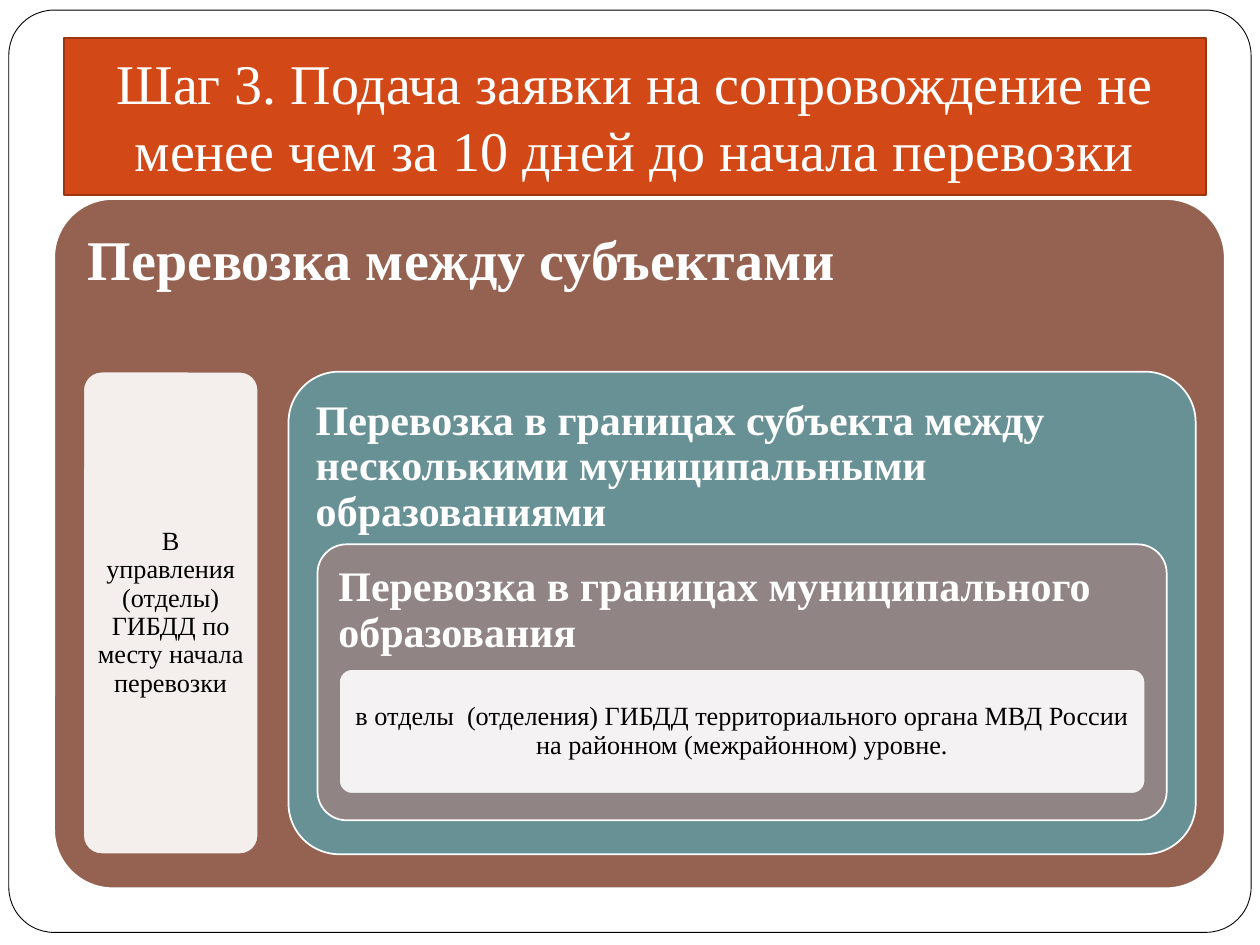
from lxml.etree import SubElement
from pptx import Presentation
from pptx.dml.color import RGBColor
from pptx.enum.shapes import MSO_SHAPE
from pptx.enum.text import MSO_ANCHOR, PP_ALIGN
from pptx.oxml.ns import qn
from pptx.util import Inches, Pt

WHITE = RGBColor(0xFF, 0xFF, 0xFF)
BLACK = RGBColor(0x00, 0x00, 0x00)
ORANGE = RGBColor(0xD3, 0x48, 0x17)
DARK_ORANGE = RGBColor(0x9C, 0x35, 0x11)
BROWN = RGBColor(0x95, 0x62, 0x51)
TEAL = RGBColor(0x68, 0x91, 0x95)
TAUPE = RGBColor(0x91, 0x84, 0x85)


def write_text(shape, text, size, color=WHITE, bold=False, font="Times New Roman",
               align=PP_ALIGN.LEFT, anchor=MSO_ANCHOR.TOP,
               insets=(0.1, 0.1, 0.1, 0.1), line_spacing=0.9):
    """Fill the shape with one paragraph; insets are left, top, right, bottom."""
    frame = shape.text_frame
    frame.word_wrap = True
    frame.vertical_anchor = anchor
    (frame.margin_left, frame.margin_top,
     frame.margin_right, frame.margin_bottom) = map(Inches, insets)
    para = frame.paragraphs[0]
    para.alignment = align
    para.line_spacing = line_spacing
    span = para.add_run()
    span.text = text
    span.font.name = font
    span.font.size = Pt(size)
    span.font.bold = bold
    span.font.color.rgb = color


class SlideBuilder:
    def __init__(self, page):
        self.page = page

    def box(self, bounds, fill, line, corner=None, width=1, opacity=None):
        """Draw a rectangle, rounded when a corner ratio is given."""
        kind = MSO_SHAPE.RECTANGLE if corner is None else MSO_SHAPE.ROUNDED_RECTANGLE
        shape = self.page.shapes.add_shape(kind, *map(Inches, bounds))
        if corner is not None:
            shape.adjustments[0] = corner
        shape.shadow.inherit = False
        shape.fill.solid()
        shape.fill.fore_color.rgb = fill
        shape.line.color.rgb = line
        shape.line.width = Pt(width)
        if opacity is not None:
            color = shape.fill._xPr.find(qn("a:solidFill"))[0]
            SubElement(color, qn("a:alpha")).set("val", str(opacity * 1000))
        return shape

    def title(self, bounds, text):
        banner = self.box(bounds, ORANGE, DARK_ORANGE)
        write_text(banner, text, 32, align=PP_ALIGN.CENTER, anchor=MSO_ANCHOR.BOTTOM,
                   insets=(0.1, 0.05, 0.1, 0.1), line_spacing=1.0)

    def level(self, bounds, fill, text, size=24, corner=0.105, inset=0.1):
        """Draw one nested panel with its heading at the top."""
        panel = self.box(bounds, fill, WHITE, corner)
        write_text(panel, text, size, bold=True, insets=(inset,) * 4)

    def recipient(self, bounds, line, text):
        """Draw a pale card naming where the application goes."""
        card = self.box(bounds, WHITE, line, corner=0.105, opacity=90)
        write_text(card, text, 15, BLACK, align=PP_ALIGN.CENTER,
                   anchor=MSO_ANCHOR.MIDDLE, insets=(0.06,) * 4)


def main():
    deck = Presentation()
    deck.slide_width, deck.slide_height = Inches(10), Inches(7.5)
    builder = SlideBuilder(deck.slides.add_slide(deck.slide_layouts[6]))

    builder.box((0.07, 0.08, 9.86, 7.32), WHITE, BLACK, corner=0.049, width=0.5)
    builder.title((0.51, 0.3, 9.06, 1.25),
                  "Шаг 3. Подача заявки на сопровождение не менее чем за 10 дней "
                  "до начала перевозки")
    builder.level((0.43, 1.58, 9.29, 5.47), BROWN, "Перевозка между субъектами",
                  size=32, corner=0.085, inset=0.13)
    builder.recipient((0.66, 2.95, 1.39, 3.83), BROWN,
                      "В управления (отделы) ГИБДД по месту начала перевозки")
    builder.level((2.29, 2.95, 7.2, 3.83), TEAL,
                  "Перевозка в границах субъекта между несколькими "
                  "муниципальными образованиями")
    builder.level((2.52, 4.32, 6.74, 2.19), TAUPE,
                  "Перевозка в границах муниципального образования")
    builder.recipient((2.69, 5.31, 6.4, 0.99), TAUPE,
                      "в отделы  (отделения) ГИБДД территориального органа МВД России "
                      "на районном (межрайонном) уровне.")
    deck.save("out.pptx")


if __name__ == "__main__":
    main()
